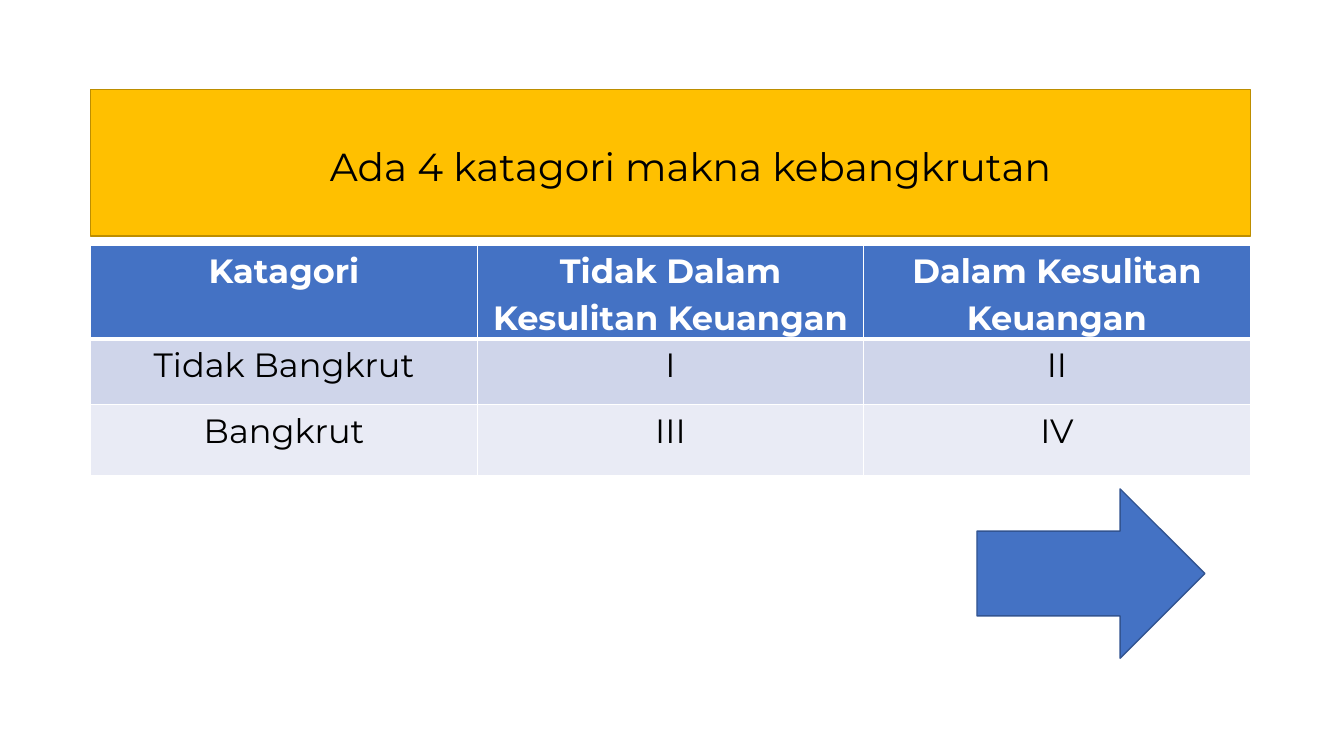
from lxml.etree import SubElement
from pptx import Presentation
from pptx.dml.color import RGBColor as Rgb
from pptx.enum.shapes import MSO_SHAPE as Form
from pptx.enum.text import MSO_ANCHOR as Anchor, MSO_AUTO_SIZE as Fit, PP_ALIGN as Align
from pptx.oxml.ns import qn
from pptx.util import Inches, Pt

theme = {
    "font": "Montserrat", "title": 27.9, "body": 24,
    "gold": "FFC000", "rim": "BD8E00", "blue": "4472C4", "navy": "325491",
    "bands": ("4472C4", "CFD5EA", "E9EBF5"), "ink": "000000", "white": "FFFFFF",
}
left, wide = 0.9, 11.5
heads = [0.92, 0.65, 0.7]
grid = [
    ["Katagori", "Tidak Dalam Kesulitan Keuangan", "Dalam Kesulitan\nKeuangan"],
    ["Tidak Bangkrut", "I", "II"],
    ["Bangkrut", "III", "IV"],
]


def style(frame, size, color, bold=False):
    for para in frame.paragraphs:
        para.alignment, para.line_spacing = Align.CENTER, 1.15
        look = {"name": theme["font"], "size": Pt(size), "bold": bold}
        for key, value in look.items():
            setattr(para.font, key, value)
        para.font.color.rgb = Rgb.from_string(theme[color])


def paint(shape, fill, line):
    shape.fill.solid()
    shape.fill.fore_color.rgb = Rgb.from_string(theme[fill])
    shape.line.color.rgb = Rgb.from_string(theme[line])
    shape.line.width = Pt(1)
    shape.shadow.inherit = False


deck = Presentation()
deck.slide_width, deck.slide_height = Inches(13.33), Inches(7.5)
slide = deck.slides.add_slide(deck.slide_layouts[5])

# Title band
title = slide.shapes.title
place = {"left": left, "top": 0.89, "width": wide, "height": 1.45}
for key, value in place.items():
    setattr(title, key, Inches(value))
paint(title, "gold", "rim")
frame = title.text_frame
frame.text = "Ada 4 katagori makna kebangkrutan"
frame.auto_size, frame.vertical_anchor = Fit.NONE, Anchor.MIDDLE
frame.margin_left = Inches(0.5)
style(frame, theme["title"], "ink")

# Category table
table = slide.shapes.add_table(
    len(grid), len(grid[0]), Inches(left), Inches(2.43), Inches(wide), Inches(sum(heads))
).table
inset = {"margin_left": 0.07, "margin_right": 0.07, "margin_top": 0, "margin_bottom": 0}
for r, words in enumerate(grid):
    table.rows[r].height = Inches(heads[r])
    for c, text in enumerate(words):
        cell = table.cell(r, c)
        cell.text = text
        for key, value in inset.items():
            setattr(cell, key, Inches(value))
        props = cell._tc.get_or_add_tcPr()
        for side in ("lnL", "lnR", "lnT", "lnB"):
            thick = (r, side) in ((0, "lnB"), (1, "lnT"))
            edge = SubElement(props, qn(f"a:{side}"), w=str(Pt(3 if thick else 1)))
            SubElement(SubElement(edge, qn("a:solidFill")), qn("a:srgbClr"), val=theme["white"])
        cell.fill.solid()
        cell.fill.fore_color.rgb = Rgb.from_string(theme["bands"][r])
        style(cell.text_frame, theme["body"], "ink" if r else "white", r == 0)

# Arrow to the next slide
arrow = slide.shapes.add_shape(
    Form.RIGHT_ARROW, Inches(9.69), Inches(4.85), Inches(2.26), Inches(1.68)
)
paint(arrow, "blue", "navy")

deck.save("out.pptx")
